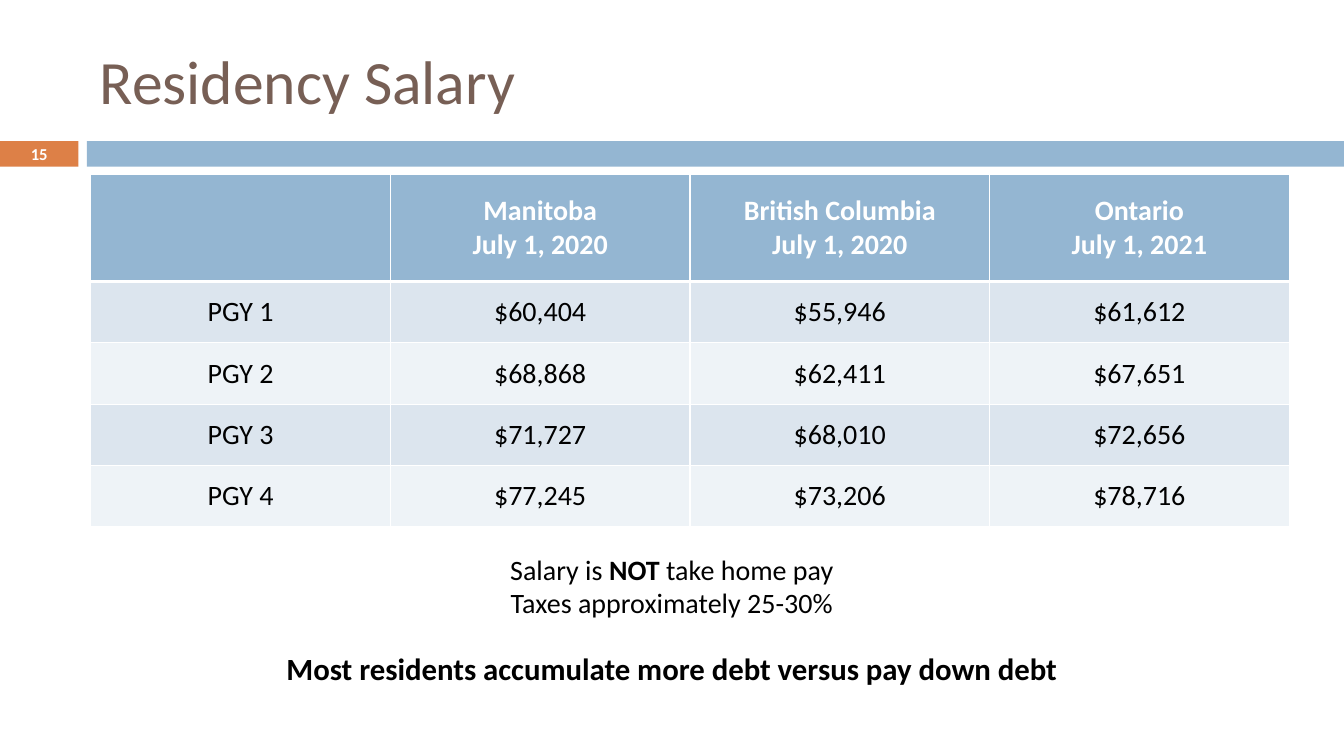
from lxml.etree import SubElement
from pptx import Presentation
from pptx.dml.color import RGBColor
from pptx.enum.shapes import MSO_SHAPE
from pptx.enum.text import MSO_ANCHOR, MSO_AUTO_SIZE, PP_ALIGN
from pptx.oxml.ns import qn
from pptx.util import Cm, Pt

FONT = "Calibri"
BLUE, ORANGE, BROWN = "94B6D2", "DD8047", "775F55"
WHITE, BLACK = "FFFFFF", "000000"
BANDS = ("DCE5EE", "EEF3F7")
SALARIES = [
    ("", "Manitoba\nJuly 1, 2020", "British Columbia\nJuly 1, 2020", "Ontario\nJuly 1, 2021"),
    ("PGY 1", "$60,404", "$55,946", "$61,612"),
    ("PGY 2", "$68,868", "$62,411", "$67,651"),
    ("PGY 3", "$71,727", "$68,010", "$72,656"),
    ("PGY 4", "$77,245", "$73,206", "$78,716"),
]


def rgb(value):
    return RGBColor.from_string(value)


def write(paragraph, text, size=20, color=BLACK, bold=False, align=PP_ALIGN.CENTER):
    paragraph.alignment = align
    run = paragraph.add_run()
    run.text = text
    run.font.name = FONT
    run.font.size = Pt(size)
    run.font.bold = bold
    run.font.color.rgb = rgb(color)


def add_title(slide, left, top, width, height):
    title = slide.shapes.title
    title.left, title.top, title.width, title.height = Cm(left), Cm(top), Cm(width), Cm(height)
    frame = title.text_frame
    frame.auto_size = MSO_AUTO_SIZE.NONE
    frame.vertical_anchor = MSO_ANCHOR.MIDDLE
    write(frame.paragraphs[0], "Residency Salary", size=44, color=BROWN, align=PP_ALIGN.LEFT)


def add_bar(slide, left, top, width, height, color):
    bar = slide.shapes.add_shape(MSO_SHAPE.RECTANGLE, Cm(left), Cm(top), Cm(width), Cm(height))
    bar.shadow.inherit = False
    bar.fill.solid()
    bar.fill.fore_color.rgb = rgb(color)
    bar.line.fill.background()
    return bar


def add_page_band(slide, left, top, width, height):
    number_width, gap = 1.98, 0.21
    number = add_bar(slide, left, top, number_width, height, ORANGE)
    frame = number.text_frame
    frame.margin_top = frame.margin_bottom = 0
    frame.vertical_anchor = MSO_ANCHOR.MIDDLE
    write(frame.paragraphs[0], "15", size=11.9, color=WHITE, bold=True)
    offset = number_width + gap
    add_bar(slide, left + offset, top, width - offset, height, BLUE)


def set_borders(cell, **widths):
    properties = cell._tc.get_or_add_tcPr()
    for position, side in enumerate("LRTB"):
        border = SubElement(properties, qn(f"a:ln{side}"), w=str(Pt(widths.get(side, 1))))
        fill = SubElement(border, qn("a:solidFill"))
        SubElement(fill, qn("a:srgbClr"), val=WHITE)
        properties.insert(position, border)


def add_salary_table(slide, left, top, width, height):
    header_height = 2.69
    row_height = (height - header_height) / (len(SALARIES) - 1)
    table = slide.shapes.add_table(
        len(SALARIES), len(SALARIES[0]), Cm(left), Cm(top), Cm(width), Cm(height)
    ).table
    table.horz_banding = False
    for column in table.columns:
        column.width = Cm(width / len(SALARIES[0]))
    for row, entries in enumerate(SALARIES):
        header = row == 0
        table.rows[row].height = Cm(header_height if header else row_height)
        for column, entry in enumerate(entries):
            cell = table.cell(row, column)
            cell.vertical_anchor = MSO_ANCHOR.MIDDLE
            cell.fill.solid()
            cell.fill.fore_color.rgb = rgb(BLUE if header else BANDS[(row - 1) % 2])
            set_borders(cell, T=3 if row == 1 else 1, B=3 if header else 1)
            frame = cell.text_frame
            for index, line in enumerate(entry.splitlines()):
                paragraph = frame.add_paragraph() if index else frame.paragraphs[0]
                write(paragraph, line, color=WHITE if header else BLACK, bold=header)


def add_takeaway(slide, left, top, width, height):
    frame = slide.shapes.add_textbox(Cm(left), Cm(top), Cm(width), Cm(height)).text_frame
    frame.word_wrap = True
    salary = frame.paragraphs[0]
    write(salary, "Salary is ")
    write(salary, "NOT", bold=True)
    write(salary, " take home pay")
    write(frame.add_paragraph(), "Taxes approximately 25-30%")
    debt = frame.add_paragraph()
    debt.space_before = Pt(22)
    write(debt, "Most residents accumulate more debt versus pay down debt", size=22, bold=True)


def main():
    deck = Presentation()
    deck.slide_width, deck.slide_height = Cm(33.87), Cm(19.05)
    slide = deck.slides.add_slide(deck.slide_layouts[5])
    add_page_band(slide, 0, 3.56, 33.87, 0.64)
    add_title(slide, 2.26, 0.64, 30.2, 2.74)
    add_salary_table(slide, 2.29, 4.4, 30.2, 8.88)
    add_takeaway(slide, 6.91, 13.79, 20.04, 3.68)
    deck.save("out.pptx")


if __name__ == "__main__":
    main()
